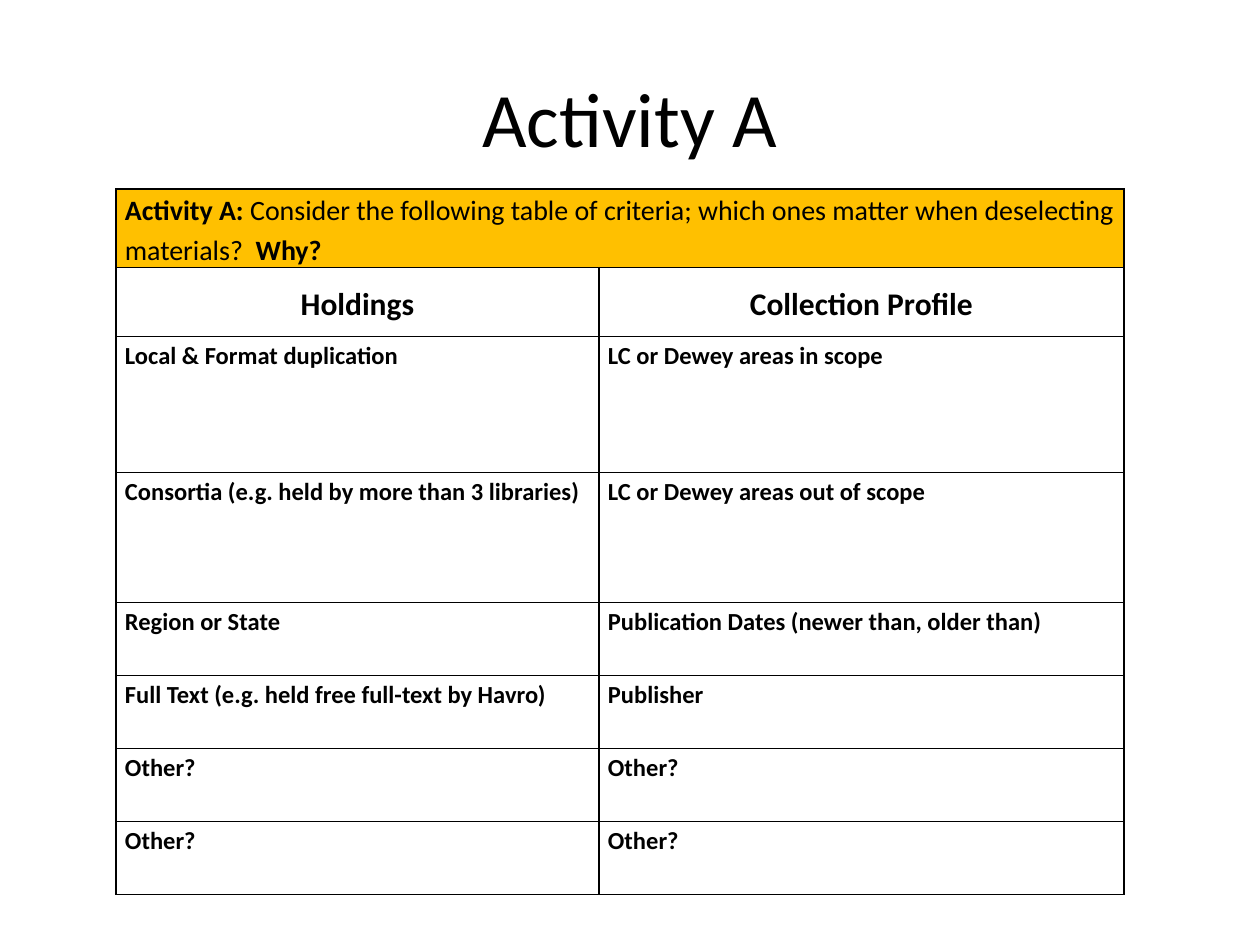
from lxml import etree
from pptx import Presentation, util as u
from pptx.dml.color import RGBColor
from pptx.enum import text
from pptx.oxml.ns import qn

PX = 914400 / 126
COLORS = {"ink": "000000", "banner": "FFC000"}
FONT = "Calibri"


def px(n):
    return u.Emu(round(n * PX))


def write(paragraph, words, size, bold):
    run = paragraph.add_run()
    run.text = words
    style = {"name": FONT, "size": u.Pt(size), "bold": bold}
    for key, value in style.items():
        setattr(run.font, key, value)
    run.font.color.rgb = RGBColor.from_string(COLORS["ink"])


prs = Presentation()
prs.slide_width, prs.slide_height = px(1260), px(945)
slide = prs.slides.add_slide(prs.slide_layouts[5])

# Title
title = slide.shapes.title
for key, value in {"left": 63, "top": 38, "width": 1134, "height": 158}.items():
    setattr(title, key, px(value))
title.text_frame.vertical_anchor = text.MSO_ANCHOR.MIDDLE
heading = title.text_frame.paragraphs[0]
heading.alignment = text.PP_ALIGN.CENTER
write(heading, "Activity A", 44, False)

# Criteria table: each cell is a list of (words, bold)
question = [
    ("Activity A: ", True),
    ("Consider the following table of criteria; which ones matter when "
     "deselecting materials?", False),
    ("  Why?", True),
]
criteria = [
    ("Holdings", "Collection Profile"),
    ("Local & Format duplication", "LC or Dewey areas in scope"),
    ("Consortia (e.g. held by more than 3 libraries)",
     "LC or Dewey areas out of scope"),
    ("Region or State", "Publication Dates (newer than, older than)"),
    ("Full Text (e.g. held free full-text by Havro)", "Publisher"),
    ("Other?", "Other?"),
    ("Other?", "Other?"),
]
rows = [[question, []]] + [[[(words, True)] for words in pair] for pair in criteria]
col_widths = [483, 525]
row_heights = [78, 69, 136, 130] + [73] * 4

table = slide.shapes.add_table(
    len(rows), len(col_widths), px(116), px(189),
    px(sum(col_widths)), px(sum(row_heights))).table
table.first_row = table.horz_banding = False
for column, width in zip(table.columns, col_widths):
    column.width = px(width)
for row, height in zip(table.rows, row_heights):
    row.height = px(height)
table.cell(0, 0).merge(table.cell(0, 1))

# Cell contents, borders and fills
margins = {"margin_left": px(9), "margin_right": px(9),
           "margin_top": 0, "margin_bottom": 0}
spacing = {"line_spacing": 1.15, "space_after": u.Pt(10)}
sizes = {0: 16, 1: 18}

for r, row in enumerate(rows):
    for c, runs in enumerate(row):
        cell = table.cell(r, c)
        for key, value in margins.items():
            setattr(cell, key, value)
        paragraph = cell.text_frame.paragraphs[0]
        for key, value in spacing.items():
            setattr(paragraph, key, value)
        if r == 1:
            cell.vertical_anchor = text.MSO_ANCHOR.MIDDLE
            paragraph.alignment = text.PP_ALIGN.CENTER
        for words, bold in runs:
            write(paragraph, words, sizes.get(r, 14), bold)

        props = cell._tc.get_or_add_tcPr()
        for side in ("lnL", "lnR", "lnT", "lnB"):
            border = etree.SubElement(props, qn(f"a:{side}"), w=str(u.Pt(1)))
            solid = etree.SubElement(border, qn("a:solidFill"))
            etree.SubElement(solid, qn("a:srgbClr"), val=COLORS["ink"])
        if r == 0:
            cell.fill.solid()
            cell.fill.fore_color.rgb = RGBColor.from_string(COLORS["banner"])
        else:
            cell.fill.background()

prs.save("out.pptx")
